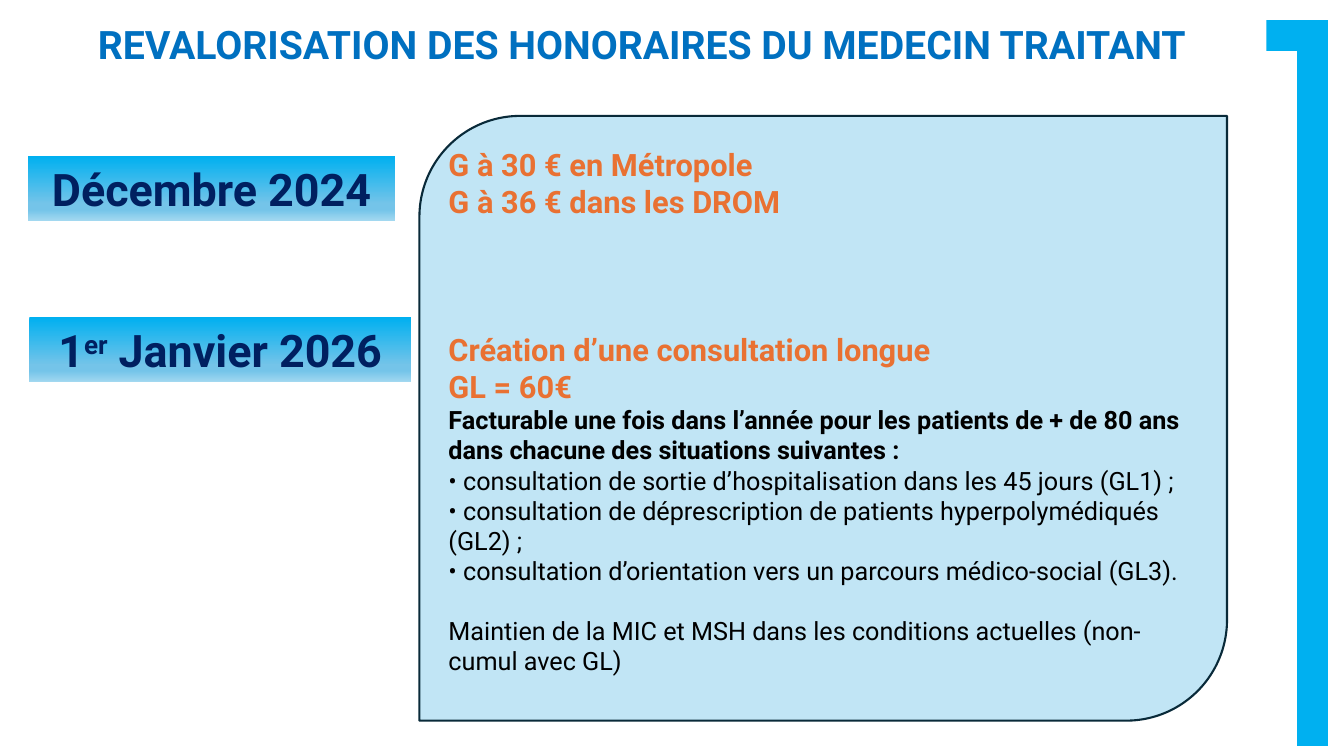
"""Build the slide on the new fees of the family doctor."""
import pptx
import pptx.util
import pptx.dml.color
import pptx.enum.shapes
import pptx.enum.text
import pptx.oxml
import pptx.oxml.ns
import lxml.etree

PX = 9144
SHAPE = pptx.enum.shapes.MSO_SHAPE
ALIGN = pptx.enum.text.PP_ALIGN
ANCHOR = pptx.enum.text.MSO_ANCHOR
THEME = {
    "font": "Roboto",
    "title": "0070C0", "bar": "00B0F0", "navy": "002060",
    "panel": "C1E5F5", "edge": "092A39", "accent": "E97132", "body": "000000",
    "fade": [(0, "00B0F0"), (74, "74C4E9"), (83, "74C4E9"), (100, "A2D8F0")],
    "head": 28, "label": 32, "lead": 22, "text": 18,
}


def color(name):
    return pptx.dml.color.RGBColor.from_string(THEME[name])


def write(par, text, size="text", tint="body", bold=False, align=ALIGN.LEFT, gap=0, raised=0):
    par.alignment = align
    par.space_before = pptx.util.Pt(gap)
    run = par.add_run()
    run.text = text
    run.font.name = THEME["font"]
    run.font.size = pptx.util.Pt(THEME[size])
    run.font.bold = bold
    run.font.color.rgb = color(tint)
    if raised:
        run.font._element.set("baseline", str(raised * 1000))


deck = pptx.Presentation()
deck.slide_width, deck.slide_height = 1333 * PX, 750 * PX
slide = deck.slides.add_slide(deck.slide_layouts[5])
shapes = slide.shapes

bar = shapes.add_shape(SHAPE.CORNER, 1256 * PX, 20 * PX, 61 * PX, 720 * PX)
bar.rotation = 180
bar.shadow.inherit = False
bar.fill.solid()
bar.fill.fore_color.rgb = color("bar")
bar.line.fill.background()

title = shapes.title
title.left, title.top, title.width, title.height = 17 * PX, 15 * PX, 1239 * PX, 57 * PX
title.text_frame.auto_size = pptx.enum.text.MSO_AUTO_SIZE.NONE
title.text_frame.vertical_anchor = ANCHOR.MIDDLE
write(title.text_frame.paragraphs[0], "REVALORISATION DES HONORAIRES DU MEDECIN TRAITANT",
      size="head", tint="title", bold=True, align=ALIGN.CENTER)

panel = shapes.add_shape(SHAPE.ROUND_2_DIAG_RECTANGLE, 416 * PX, 115 * PX, 801 * PX, 600 * PX)
panel.shadow.inherit = False
panel.fill.solid()
panel.fill.fore_color.rgb = color("panel")
panel.line.color.rgb = color("edge")
panel.line.width = pptx.util.Pt(1.5)

labels = [
    (28, 155, 364, [("Décembre 2024", 0)]),
    (29, 315, 379, [("1", 0), ("er", 30), (" Janvier 2026", 0)]),
]
for left, top, width, parts in labels:
    label = shapes.add_shape(SHAPE.RECTANGLE, left * PX, top * PX, width * PX, 64 * PX)
    label.shadow.inherit = False
    label.line.fill.background()
    label.fill.gradient()
    label.fill.gradient_angle = 270
    stops = label._element.spPr.find(".//" + pptx.oxml.ns.qn("a:gsLst"))
    for stop in list(stops):
        stops.remove(stop)
    for place, shade in THEME["fade"]:
        stop = lxml.etree.SubElement(stops, pptx.oxml.ns.qn("a:gs"), pos=str(place * 1000))
        lxml.etree.SubElement(stop, pptx.oxml.ns.qn("a:srgbClr"), val=shade)
    frame = label.text_frame
    frame.word_wrap = False
    frame.vertical_anchor = ANCHOR.MIDDLE
    for text, raised in parts:
        write(frame.paragraphs[0], text, size="label", tint="navy", bold=True,
              align=ALIGN.CENTER, raised=raised)

lead = {"size": "lead", "tint": "accent", "bold": True}
lines = [
    ("G à 30 € en Métropole", lead),
    ("G à 36 € dans les DROM", lead),
    ("Création d’une consultation longue", {**lead, "gap": 79}),
    ("GL = 60€", lead),
    ("Facturable une fois dans l’année pour les patients de + de 80 ans "
     "dans chacune des situations suivantes :", {"bold": True}),
    ("• consultation de sortie d’hospitalisation dans les 45 jours (GL1) ;", {}),
    ("• consultation de déprescription de patients hyperpolymédiqués (GL2) ;", {}),
    ("• consultation d’orientation vers un parcours médico-social (GL3).", {}),
    ("Maintien de la MIC et MSH dans les conditions actuelles (non-cumul avec GL)", {"gap": 21}),
]
frame = shapes.add_textbox(435 * PX, 140 * PX, 753 * PX, 572 * PX).text_frame
frame.word_wrap = True
for index, (text, style) in enumerate(lines):
    par = frame.add_paragraph() if index else frame.paragraphs[0]
    write(par, text, **style)

deck.save("out.pptx")
